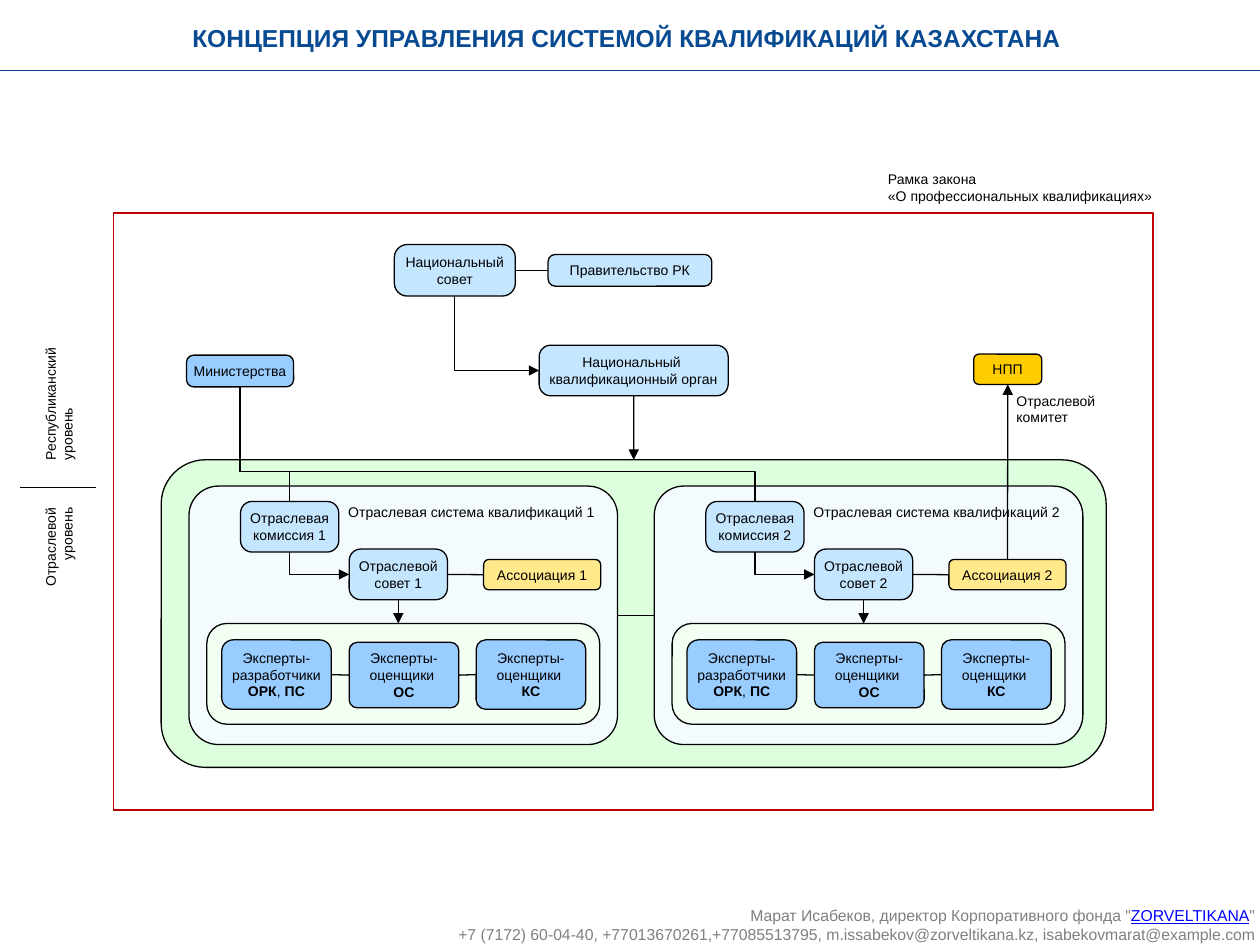
from pptx import Presentation
from pptx.dml.color import RGBColor
from pptx.enum.shapes import MSO_CONNECTOR, MSO_SHAPE
from pptx.enum.text import MSO_ANCHOR, PP_ALIGN
from pptx.oxml.ns import qn
from pptx.util import Cm, Pt
from lxml.etree import SubElement

COLORS = {
    "black": "000000", "title": "084A92", "frame": "C00000", "footer": "808080",
    "link": "0000FF", "green": "DDFFDD", "sector": "F3FBFF", "experts": "F3FFF3",
    "council": "C5E6FF", "blue": "99CCFF", "gold": "FFCC00", "sand": "FFE98B",
}
TOP, LEFT, BOTTOM, RIGHT = range(4)
SECTOR_STEP = 9.38

TITLE = "КОНЦЕПЦИЯ УПРАВЛЕНИЯ СИСТЕМОЙ КВАЛИФИКАЦИЙ КАЗАХСТАНА "
FOOTER = [
    [("Марат Исабеков, директор Корпоративного фонда \"", "footer"),
     ("ZORVELTIKANA", "link"), ("\"", "footer")],
    [("+7 (7172) 60-04-40, +77013670261,+77085513795, "
      "m.issabekov@zorveltikana.kz, isabekovmarat@example.com", "footer")],
]
NATIONAL = {
    "council": (7.95, 4.93, 2.44, 1.04, 0.252, "council", ["Национальный совет"]),
    "government": (11.05, 5.13, 3.3, 0.64, 0.227, "council", ["Правительство РК"]),
    "body": (10.87, 6.96, 3.81, 1.02, 0.227, "council",
             ["Национальный ", "квалификационный орган"]),
    "ministries": (3.76, 7.16, 2.16, 0.64, 0.227, "blue", ["Министерства"]),
    "chamber": (19.63, 7.14, 1.37, 0.61, 0.17, "gold", ["НПП"]),
}
SECTOR = {
    "panel": (3.81, 9.8, 8.64, 5.21, 0.114, "sector", []),
    "experts": (4.17, 12.57, 7.92, 2.03, 0.199, "experts", []),
    "council": (7.04, 11.07, 1.98, 1.02, 0.227, "council", ["Отраслевой совет {}"]),
    "commission": (4.85, 10.11, 1.98, 1.02, 0.227, "council", ["Отраслевая комиссия {}"]),
    "association": (9.75, 11.28, 2.36, 0.61, 0.17, "sand", ["Ассоциация {}"]),
    "developers": (4.47, 12.9, 2.21, 1.4, 0.167, "blue",
                   ["Эксперты-разработчики *ОРК*, *ПС*"]),
    "assessors": (7.04, 12.95, 2.21, 1.32, 0.122, "blue", ["Эксперты-оценщики ", "*ОС*"]),
    "certifiers": (9.6, 12.9, 2.21, 1.4, 0.137, "blue", ["Эксперты-оценщики ", "*КС*"]),
}
SECTOR_LABEL = (6.93, 10.06, 5.33, 0.53)
LABELS = [
    (17.81, 3.33, 5.6, 0.89, ["Рамка закона", "«О профессиональных квалификациях»"], PP_ALIGN.LEFT, 0),
    (20.4, 7.8, 1.85, 0.89, ["Отраслевой комитет"], PP_ALIGN.LEFT, 0),
    (-0.3, 7.44, 2.97, 0.89, ["Республиканский", "уровень"], PP_ALIGN.LEFT, 270),
    (-0.3, 11.18, 2.97, 0.89, ["Отраслевой", "уровень"], PP_ALIGN.RIGHT, 270),
]

deck = Presentation()
deck.slide_width, deck.slide_height = Cm(25.4), Cm(19.05)
page = deck.slides.add_slide(deck.slide_layouts[6])


def color(name):
    return RGBColor.from_string(COLORS[name])


def style(font, size, tint):
    font.name, font.size = "Arial", Pt(size)
    font.color.rgb = color(tint)


def write(shape, lines, align=PP_ALIGN.CENTER):
    frame = shape.text_frame
    frame.word_wrap = True
    frame.vertical_anchor = MSO_ANCHOR.MIDDLE
    frame.margin_left = frame.margin_right = Cm(0.09)
    frame.margin_top = frame.margin_bottom = Cm(0.1)
    for index, line in enumerate(lines):
        para = frame.paragraphs[0] if index == 0 else frame.add_paragraph()
        para.alignment = align
        style(para.font, 8, "black")
        for part, text in enumerate(line.split("*")):
            if text:
                span = para.add_run()
                span.text = text
                if part % 2:
                    span.font.bold = True


def add_box(left, top, width, height, corner, fill, lines):
    box = page.shapes.add_shape(MSO_SHAPE.ROUNDED_RECTANGLE,
                                Cm(left), Cm(top), Cm(width), Cm(height))
    box.adjustments[0] = corner
    box.shadow.inherit = False
    box.fill.solid()
    box.fill.fore_color.rgb = color(fill)
    box.line.color.rgb = color("black")
    box.line.width = Pt(0.75)
    if lines:
        write(box, lines)
    return box


def add_label(left, top, width, height, lines, align=PP_ALIGN.LEFT, turn=0):
    label = page.shapes.add_textbox(Cm(left), Cm(top), Cm(width), Cm(height))
    label.rotation = turn
    write(label, lines, align)


def side(box, site):
    across = {TOP: 0.5, LEFT: 0, BOTTOM: 0.5, RIGHT: 1}[site]
    down = {TOP: 0, LEFT: 0.5, BOTTOM: 1, RIGHT: 0.5}[site]
    return int(box.left + box.width * across), int(box.top + box.height * down)


def add_line(start, end, arrow=False, tint="black", width=0.75, kind=MSO_CONNECTOR.STRAIGHT):
    ends = [side(*spot) if hasattr(spot[0], "width") else (Cm(spot[0]), Cm(spot[1]))
            for spot in (start, end)]
    line = page.shapes.add_connector(kind, *ends[0], *ends[1])
    if hasattr(start[0], "width"):
        line.begin_connect(*start)
    if hasattr(end[0], "width"):
        line.end_connect(*end)
    line.line.color.rgb = color(tint)
    line.line.width = Pt(width)
    if arrow:
        SubElement(line.line._get_or_add_ln(), qn("a:tailEnd"), type="triangle")
    SubElement(line._element.spPr, qn("a:effectLst"))
    return line


def add_elbow(start, end, bend=None, arrow=False):
    line = add_line(start, end, arrow, kind=MSO_CONNECTOR.ELBOW)
    across, down = line.width, line.height
    shift = (across - down) // 2
    line.left, line.top = line.left + shift, line.top - shift
    line.width, line.height = down, across
    properties = line._element.spPr
    properties.xfrm.set("rot", "16200000")
    properties.xfrm.set("flipH", "1")
    geometry = properties.find(qn("a:prstGeom"))
    if bend is None:
        geometry.set("prst", "bentConnector2")
    else:
        guides = geometry.find(qn("a:avLst"))
        SubElement(guides, qn("a:gd"), name="adj1", fmla=f"val {round(bend * 100000)}")


def add_sector(number):
    offset = SECTOR_STEP * (number - 1)
    boxes = {name: add_box(left + offset, *rest, [line.format(number) for line in lines])
             for name, (left, *rest, lines) in SECTOR.items()}
    left, *rest = SECTOR_LABEL
    add_label(left + offset, *rest, [f"Отраслевая система квалификаций {number}"])
    add_elbow((boxes["commission"], BOTTOM), (boxes["council"], LEFT), arrow=True)
    add_line((boxes["council"], BOTTOM), (8.03 + offset, 12.57), arrow=True)
    for first, second in (("council", "association"), ("developers", "assessors"),
                          ("assessors", "certifiers")):
        add_line((boxes[first], RIGHT), (boxes[second], LEFT))
    return boxes


sectors_area = add_box(3.25, 9.27, 19.05, 6.2, 0.144, "green", [])

heading = page.shapes.add_textbox(Cm(0), Cm(0.33), Cm(25.4), Cm(0.86))
heading.text_frame.word_wrap = True
heading_para = heading.text_frame.paragraphs[0]
heading_para.text, heading_para.alignment = TITLE, PP_ALIGN.CENTER
style(heading_para.font, 14, "title")
heading_para.font.bold = True
add_line((0, 1.42), (25.4, 1.42), tint="title", width=1)

national = {name: add_box(*values) for name, values in NATIONAL.items()}
sectors = [add_sector(number) for number in (1, 2)]

add_line((national["council"], RIGHT), (national["government"], LEFT))
add_elbow((national["council"], BOTTOM), (national["body"], LEFT), arrow=True)
add_line((national["body"], BOTTOM), (sectors_area, TOP), arrow=True)
add_line((sectors[0]["panel"], RIGHT), (sectors[1]["panel"], LEFT))
for sector in sectors:
    add_elbow((national["ministries"], BOTTOM), (sector["commission"], TOP), bend=0.736)
add_line((sectors[1]["association"], TOP), (national["chamber"], BOTTOM), arrow=True)
add_line((0.41, 9.83), (1.93, 9.83), width=1)

law = page.shapes.add_shape(MSO_SHAPE.RECTANGLE, Cm(2.29), Cm(4.29), Cm(20.96), Cm(12.04))
law.shadow.inherit = False
law.fill.background()
law.line.color.rgb = color("frame")
law.line.width = Pt(1)
for label in LABELS:
    add_label(*label)

contacts = page.shapes.add_textbox(Cm(5.31), Cm(18.14), Cm(20.24), Cm(1.02))
contacts.text_frame.word_wrap = True
for index, spans in enumerate(FOOTER):
    para = contacts.text_frame.paragraphs[0] if index == 0 else contacts.text_frame.add_paragraph()
    para.alignment = PP_ALIGN.RIGHT
    style(para.font, 9, "footer")
    for text, tint in spans:
        span = para.add_run()
        span.text = text
        if tint == "link":
            span.font.color.rgb = color(tint)
            span.font.underline = True

deck.save("out.pptx")
